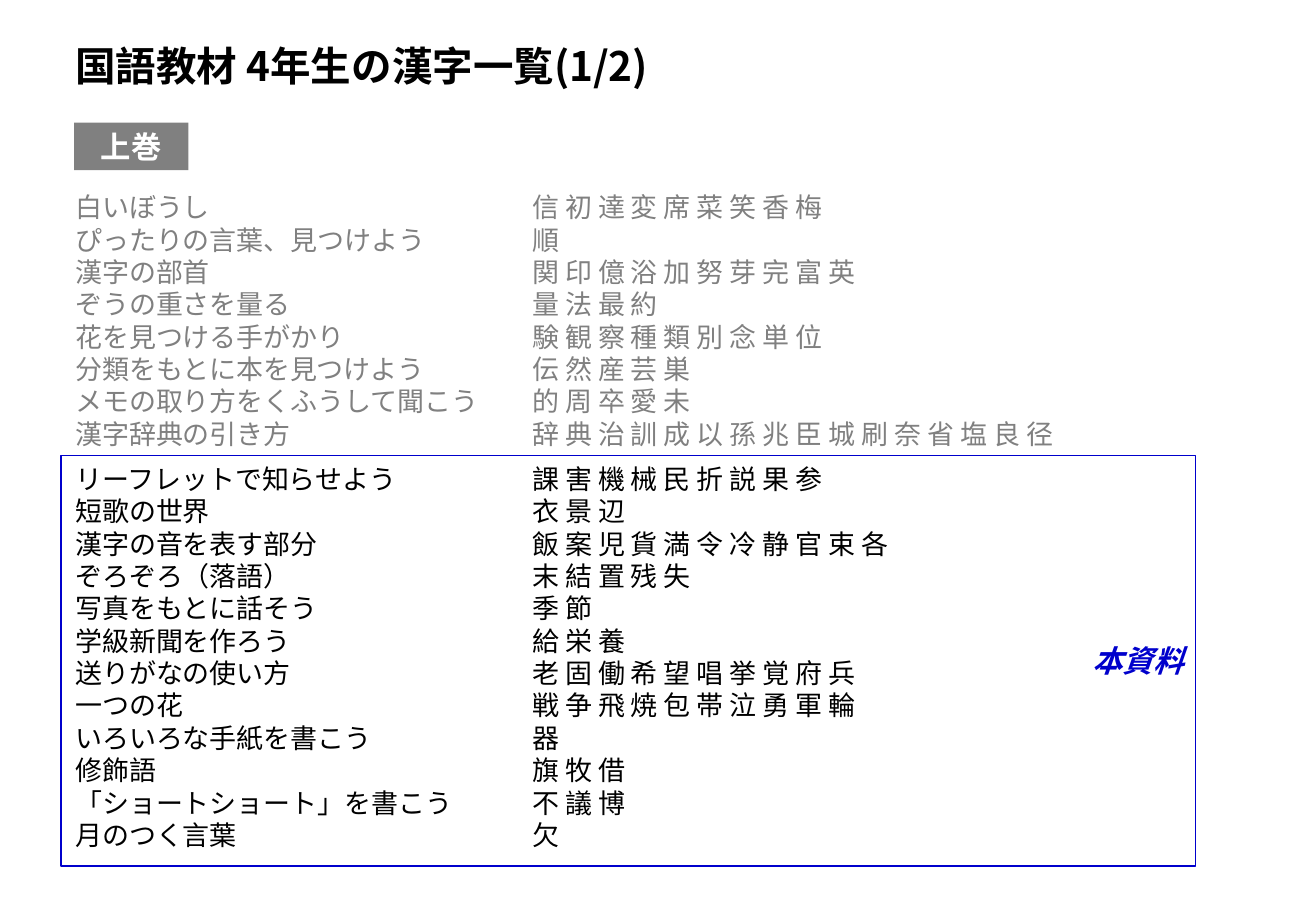
from pptx import Presentation
from pptx.dml.color import RGBColor
from pptx.enum.shapes import MSO_SHAPE
from pptx.enum.text import MSO_ANCHOR, MSO_AUTO_SIZE, PP_ALIGN
from pptx.oxml.ns import qn
from pptx.util import Inches, Pt
from lxml.etree import SubElement

FONT = "Noto Sans CJK JP"
BLACK, GRAY, WHITE, BLUE = "000000", "808080", "FFFFFF", "0000CC"

EARLIER_UNITS = [
    ("白いぼうし", "信初達変席菜笑香梅"),
    ("ぴったりの言葉、見つけよう", "順"),
    ("漢字の部首", "関印億浴加努芽完富英"),
    ("ぞうの重さを量る", "量法最約"),
    ("花を見つける手がかり", "験観察種類別念単位"),
    ("分類をもとに本を見つけよう", "伝然産芸巣"),
    ("メモの取り方をくふうして聞こう", "的周卒愛未"),
    ("漢字辞典の引き方", "辞典治訓成以孫兆臣城刷奈省塩良径"),
]
COVERED_UNITS = [
    ("リーフレットで知らせよう", "課害機械民折説果参"),
    ("短歌の世界", "衣景辺"),
    ("漢字の音を表す部分", "飯案児貨満令冷静官束各"),
    ("ぞろぞろ（落語）", "末結置残失"),
    ("写真をもとに話そう", "季節"),
    ("学級新聞を作ろう", "給栄養"),
    ("送りがなの使い方", "老固働希望唱挙覚府兵"),
    ("一つの花", "戦争飛焼包帯泣勇軍輪"),
    ("いろいろな手紙を書こう", "器"),
    ("修飾語", "旗牧借"),
    ("「ショートショート」を書こう", "不議博"),
    ("月のつく言葉", "欠"),
]


def add_text(paragraph, text, size, color, bold=False, italic=False):
    run = paragraph.add_run()
    run.text = text
    font = run.font
    font.size, font.bold, font.italic = Pt(size), bold, italic
    font.color.rgb = RGBColor.from_string(color)
    font.name = FONT
    SubElement(font._element, qn("a:ea"), typeface=FONT)


def place(placeholder, left, top, width, height):
    """Move a placeholder and let its text start at the top left."""
    placeholder.left, placeholder.top = Inches(left), Inches(top)
    placeholder.width, placeholder.height = Inches(width), Inches(height)
    frame = placeholder.text_frame
    frame.word_wrap = True
    frame.auto_size = MSO_AUTO_SIZE.NONE
    frame.vertical_anchor = MSO_ANCHOR.TOP
    return frame


presentation = Presentation()
presentation.slide_width = Inches(10.83)
presentation.slide_height = Inches(7.5)
slide = presentation.slides.add_slide(presentation.slide_layouts[3])

# Title
title_frame = place(slide.shapes.title, 0.52, 0.29, 9.69, 0.51)
paragraph = title_frame.paragraphs[0]
paragraph.alignment = PP_ALIGN.LEFT
paragraph.line_spacing = Pt(28.8)
add_text(paragraph, "国語教材 4年生の漢字一覧(1/2)", 24, BLACK, bold=True)

# Unit names on the left, their kanji on the right
names = [name for name, kanji in EARLIER_UNITS + COVERED_UNITS]
kanji_lists = [" ".join(kanji) for name, kanji in EARLIER_UNITS + COVERED_UNITS]
columns = [(1, 0.52, 3.76, names), (2, 4.28, 6.14, kanji_lists)]
for placeholder_index, left, width, lines in columns:
    column_frame = place(slide.placeholders[placeholder_index], left, 1.52, width, 5.76)
    for index, line in enumerate(lines):
        paragraph = column_frame.add_paragraph() if index else column_frame.paragraphs[0]
        paragraph.alignment = PP_ALIGN.LEFT
        paragraph.line_spacing = Pt(19.2)
        paragraph.space_before = Pt(7.5 if index == len(EARLIER_UNITS) else 0)
        properties = paragraph._p.get_or_add_pPr()
        properties.set("marL", "0")
        properties.set("indent", "0")
        SubElement(properties, qn("a:buNone"))
        add_text(paragraph, line, 16, GRAY if index < len(EARLIER_UNITS) else BLACK)

# Volume label
volume_label = slide.shapes.add_shape(
    MSO_SHAPE.RECTANGLE, Inches(0.61), Inches(1.01), Inches(0.94), Inches(0.39))
volume_label.shadow.inherit = False
volume_label.fill.solid()
volume_label.fill.fore_color.rgb = RGBColor.from_string(GRAY)
volume_label.line.fill.background()
paragraph = volume_label.text_frame.paragraphs[0]
paragraph.alignment = PP_ALIGN.CENTER
add_text(paragraph, "上巻", 18, WHITE, bold=True)

# Frame around the units covered here
covered_frame = slide.shapes.add_shape(
    MSO_SHAPE.RECTANGLE, Inches(0.5), Inches(3.75), Inches(9.34), Inches(3.38))
covered_frame.shadow.inherit = False
covered_frame.fill.background()
covered_frame.line.color.rgb = RGBColor.from_string(BLUE)
covered_frame.line.width = Pt(1)
paragraph = covered_frame.text_frame.paragraphs[0]
paragraph.alignment = PP_ALIGN.RIGHT
add_text(paragraph, "本資料", 18, BLUE, bold=True, italic=True)

presentation.save("out.pptx")
